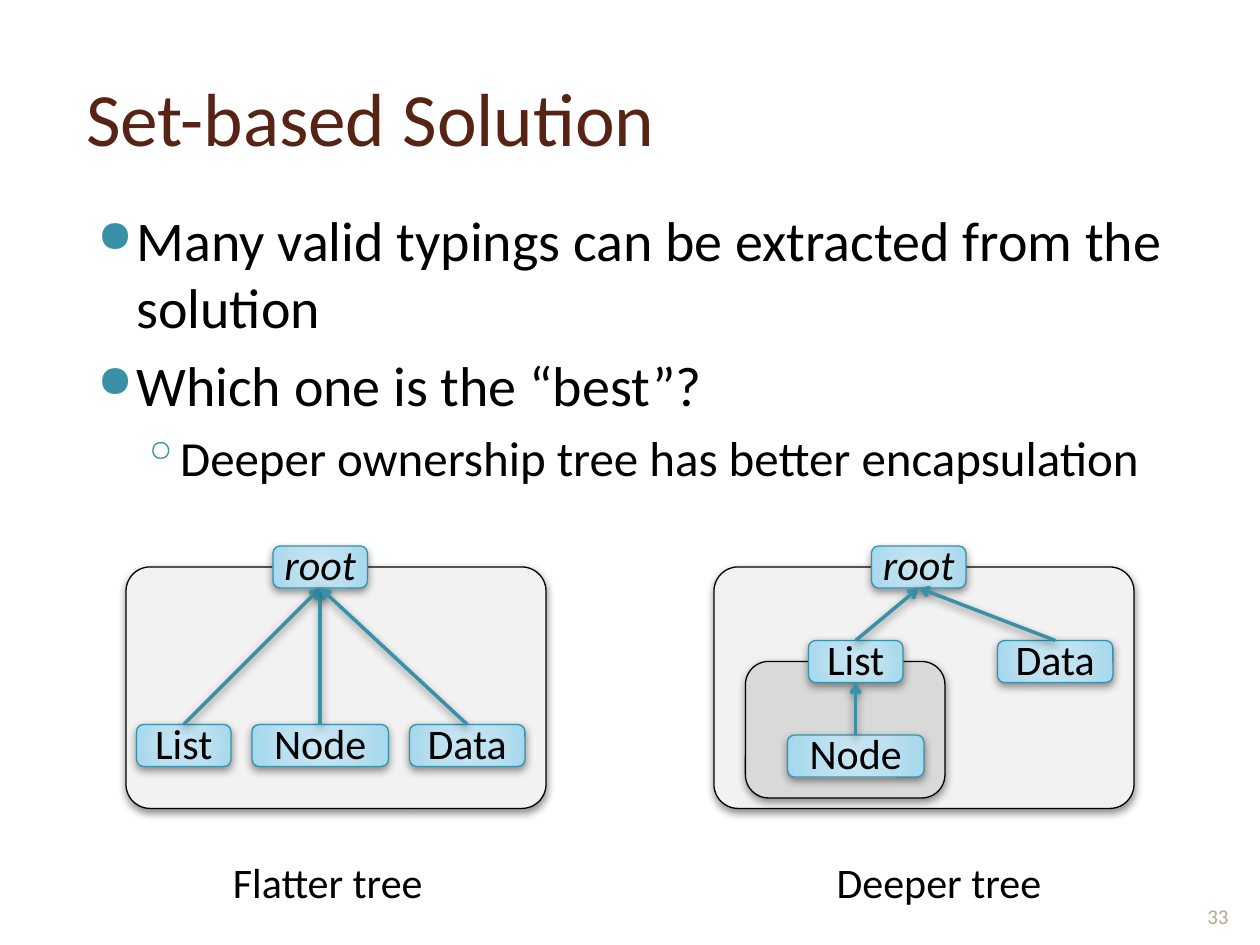
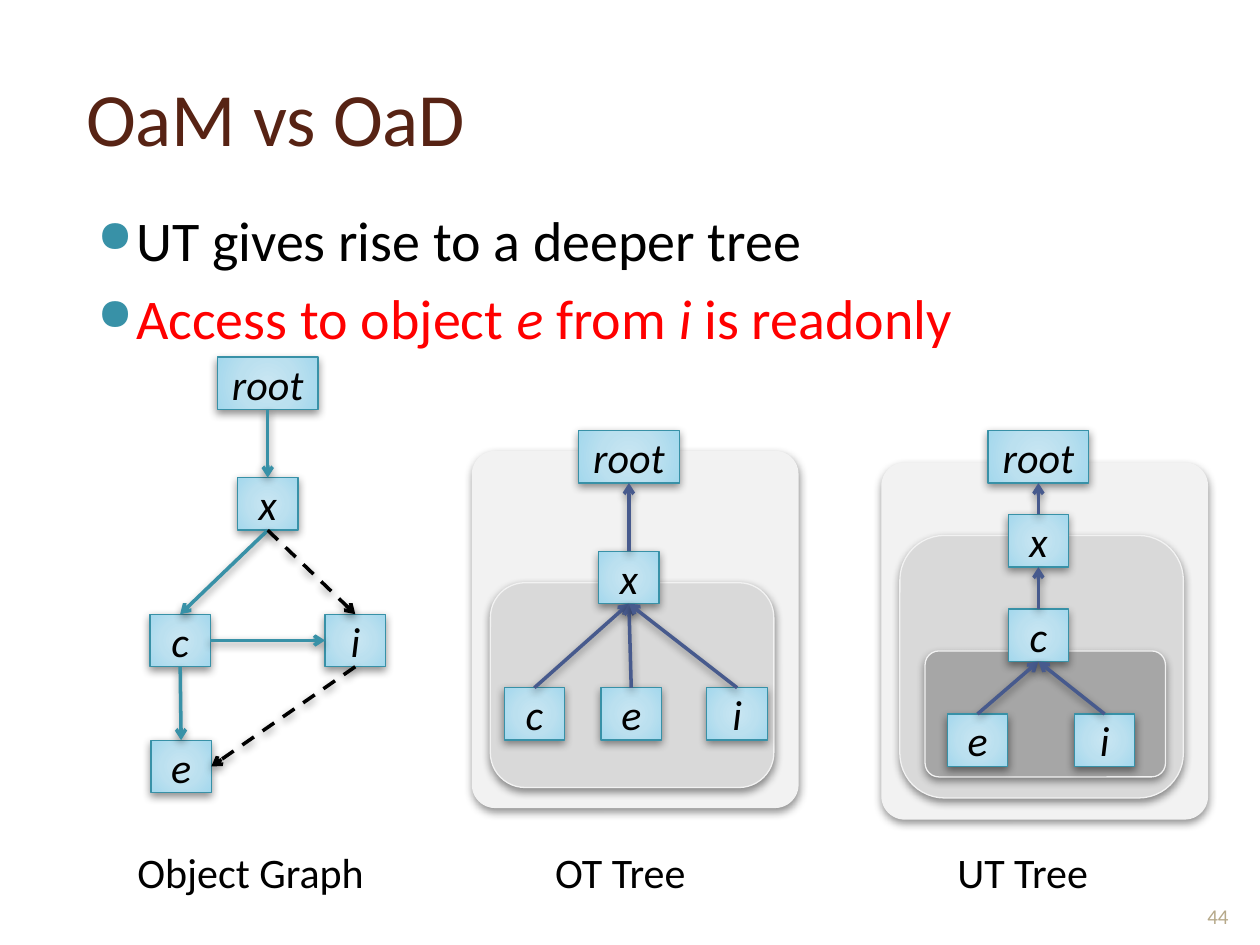
from dataclasses import dataclass

from lxml import etree
from pptx import Presentation
from pptx.dml.color import RGBColor
from pptx.enum.dml import MSO_LINE
from pptx.enum.shapes import MSO_CONNECTOR, MSO_SHAPE
from pptx.enum.text import MSO_ANCHOR, MSO_AUTO_SIZE, PP_ALIGN
from pptx.oxml import parse_xml
from pptx.oxml.ns import nsdecls, qn
from pptx.util import Inches, Pt

RECTANGLE, ROUNDED = MSO_SHAPE.RECTANGLE, MSO_SHAPE.ROUNDED_RECTANGLE
STRAIGHT, DASH = MSO_CONNECTOR.STRAIGHT, MSO_LINE.DASH
LEFT, CENTER = PP_ALIGN.LEFT, PP_ALIGN.CENTER
TOP, MIDDLE, BOTTOM = MSO_ANCHOR.TOP, MSO_ANCHOR.MIDDLE, MSO_ANCHOR.BOTTOM
NO_AUTOFIT = MSO_AUTO_SIZE.NONE
TITLE_ONLY = 5
TOP_SIDE, LEFT_SIDE, BOTTOM_SIDE, RIGHT_SIDE = range(4)
CHILD_TO_PARENT = (TOP_SIDE, BOTTOM_SIDE)
PARENT_TO_CHILD = (BOTTOM_SIDE, TOP_SIDE)


@dataclass(frozen=True)
class Theme:
    font: str = "Calibri"
    title: str = "572314"
    ink: str = "000000"
    accent: str = "3891A7"
    link: str = "475A8D"
    alert: str = "FF0000"
    number: str = "B6A98A"
    light: str = "F2F2F2"
    medium: str = "D9D9D9"
    dark: str = "A6A6A6"
    node_gradient: tuple = ((0, "C9E6F2"), (50, "BBE0EF"), (97, "A4D8ED"), (100, "9BD7EE"))
    title_size: int = 43
    label_size: int = 24
    number_size: int = 12
    thin: float = 0.75
    thick: float = 2


@dataclass(frozen=True)
class BulletStyle:
    size: float
    before: float
    margin: float
    hanging: float
    character: str
    percent: int


@dataclass(frozen=True)
class NodeStyle:
    shape: int
    height: float
    widths: dict
    frame: dict
    spacing: float


BULLETS = (BulletStyle(32, 6, 0.4, 0.31, "●", 80), BulletStyle(28, 5.5, 0.7, 0.26, "◦", 100))
NO_MARGINS = dict.fromkeys(("margin_left", "margin_top", "margin_right", "margin_bottom"), 0)
TYPE_NODE = NodeStyle(ROUNDED, 4, {"root": 9, "List": 9, "Node": 13, "Data": 11},
                      {"vertical_anchor": BOTTOM, **NO_MARGINS}, 0.5)
OBJECT_NODE = NodeStyle(RECTANGLE, 5, {"root": 9.6, "x": 5.76, "c": 5.76, "e": 5.76, "i": 5.76},
                        {"vertical_anchor": MIDDLE}, 1.0)


def apply(target, formats):
    for name, value in formats.items():
        setattr(target, name, value)


class Deck:
    """Places elements on a grid of 120 columns by 90 rows."""

    columns, rows = 120, 90

    def __init__(self, theme):
        self.theme = theme
        self.presentation = Presentation()
        apply(self.presentation, {"slide_width": Inches(10), "slide_height": Inches(7.5)})
        self.slide = None

    def grid(self, column, row, width, height):
        across = self.presentation.slide_width / self.columns
        down = self.presentation.slide_height / self.rows
        return [round(value) for value in (column * across, row * down, width * across, height * down)]

    def add_slide(self, title, number):
        self.slide = self.presentation.slides.add_slide(self.presentation.slide_layouts[TITLE_ONLY])
        holder = self.slide.shapes.title
        apply(holder, dict(zip(("left", "top", "width", "height"), self.grid(7, 3.6, 106.5, 15))))
        apply(holder.text_frame, {"vertical_anchor": MIDDLE, "auto_size": NO_AUTOFIT, "word_wrap": True})
        self.add_text(holder.text_frame.paragraphs[0], title, self.theme.title_size, self.theme.title)
        self.text(str(number), (113, 82.8, 6, 6.2), self.theme.number_size,
                  self.theme.number, CENTER, BOTTOM)

    def add_text(self, paragraph, text, size, color, align=LEFT, italic=False):
        paragraph.alignment = align
        run = paragraph.add_run()
        run.text = text
        apply(run.font, {"name": self.theme.font, "size": Pt(size), "italic": italic})
        run.font.color.rgb = RGBColor.from_string(color)

    def text_frame(self, area, anchor=TOP):
        frame = self.slide.shapes.add_textbox(*self.grid(*area)).text_frame
        apply(frame, {"word_wrap": True, "vertical_anchor": anchor})
        return frame

    def text(self, text, area, size, color, align=LEFT, anchor=TOP):
        self.add_text(self.text_frame(area, anchor).paragraphs[0], text, size, color, align)

    def caption(self, text, column, row, width):
        self.text(text, (column, row, width, 6), self.theme.label_size, self.theme.ink)

    def bullets(self, items):
        """Each item is a level, a colour and runs that alternate upright and italic."""
        frame = self.text_frame((7, 19, 106.5, 63))
        for index, (level, color, runs) in enumerate(items):
            paragraph = frame.add_paragraph() if index else frame.paragraphs[0]
            style = BULLETS[level]
            apply(paragraph, {"level": level, "space_before": Pt(style.before)})
            for position, text in enumerate(runs):
                self.add_text(paragraph, text, style.size, color, italic=position % 2 == 1)
            properties = paragraph._p.get_or_add_pPr()
            properties.set("marL", str(Inches(style.margin)))
            properties.set("indent", str(-Inches(style.hanging)))
            bullet_color = etree.SubElement(properties, qn("a:buClr"))
            etree.SubElement(bullet_color, qn("a:srgbClr"), val=self.theme.accent)
            etree.SubElement(properties, qn("a:buSzPct"), val=str(style.percent * 1000))
            etree.SubElement(properties, qn("a:buChar"), char=style.character)

    def add_shadow(self, properties):
        effects = properties.find(qn("a:effectLst"))
        if effects is None:
            effects = etree.SubElement(properties, qn("a:effectLst"))
        shadow = etree.SubElement(effects, qn("a:outerShdw"), blurRad=str(Pt(5)), dist=str(Pt(2)),
                                  dir="5400000", rotWithShape="0")
        color = etree.SubElement(shadow, qn("a:srgbClr"), val=self.theme.ink)
        etree.SubElement(color, qn("a:alpha"), val="43000")

    def shape(self, kind, area, fill, outline):
        shape = self.slide.shapes.add_shape(kind, *self.grid(*area))
        shape.fill.solid()
        shape.fill.fore_color.rgb = RGBColor.from_string(fill)
        shape.line.color.rgb = RGBColor.from_string(outline)
        shape.line.width = Pt(self.theme.thin)
        shape.shadow.inherit = False
        self.add_shadow(shape.element.spPr)
        return shape

    def panel(self, area, fill, outline, rounding=0.17):
        self.shape(ROUNDED, area, fill, outline).adjustments[0] = rounding

    def node(self, name, center, row, style):
        width = style.widths[name]
        shape = self.shape(style.shape, (center - width / 2, row, width, style.height),
                           self.theme.node_gradient[0][1], self.theme.accent)
        # Radial gradient
        stops = "".join(f'<a:gs pos="{position * 1000}"><a:srgbClr val="{color}"/></a:gs>'
                        for position, color in self.theme.node_gradient)
        properties = shape.element.spPr
        properties.replace(properties.find(qn("a:solidFill")), parse_xml(
            f'<a:gradFill {nsdecls("a")} rotWithShape="1"><a:gsLst>{stops}</a:gsLst><a:path path="circle">'
            '<a:fillToRect l="50000" t="50000" r="50000" b="50000"/></a:path></a:gradFill>'))
        # Label: objects are lower case and italic
        apply(shape.text_frame, {"word_wrap": True, **style.frame})
        paragraph = shape.text_frame.paragraphs[0]
        paragraph.line_spacing = style.spacing
        self.add_text(paragraph, name, self.theme.label_size, self.theme.ink, CENTER, name.islower())
        return shape

    def arrow(self, start, end, sides, color, dash=None):
        connector = self.slide.shapes.add_connector(STRAIGHT, 0, 0, 0, 0)
        connector.begin_connect(start, sides[0])
        connector.end_connect(end, sides[1])
        connector.line.color.rgb = RGBColor.from_string(color)
        apply(connector.line, {"width": Pt(self.theme.thick), "dash_style": dash})
        properties = connector.element.spPr
        etree.SubElement(properties.find(qn("a:ln")), qn("a:tailEnd"), type="arrow")
        self.add_shadow(properties)

    def nodes(self, places, style):
        return {name: self.node(name, center, row, style) for name, (center, row) in places.items()}

    def tree(self, places, parents, style, color):
        nodes = self.nodes(places, style)
        for child, parent in parents.items():
            self.arrow(nodes[child], nodes[parent], CHILD_TO_PARENT, color)


def build_set_solution(deck):
    theme = deck.theme
    deck.add_slide("Set-based Solution", 33)
    deck.bullets([
        (0, theme.ink, ["Many valid typings can be extracted from the solution"]),
        (0, theme.ink, ["Which one is the “best”?"]),
        (1, theme.ink, ["Deeper ownership tree has better encapsulation"]),
    ])

    # Outer panels of both trees
    for column in (12, 68):
        deck.panel((column, 54, 40, 23), theme.light, theme.ink, 0.1)

    # Flatter tree
    deck.tree({"root": (30.5, 52), "List": (17.5, 69), "Node": (30.5, 69), "Data": (44.5, 69)},
              {"List": "root", "Node": "root", "Data": "root"}, TYPE_NODE, theme.accent)
    deck.caption("Flatter tree", 21, 81, 21)

    # Deeper tree
    deck.panel((71, 63, 19, 13), theme.medium, theme.ink)
    deck.tree({"root": (87.5, 52), "List": (81.5, 61), "Node": (81.5, 70), "Data": (100.5, 61)},
              {"List": "root", "Node": "List", "Data": "root"}, TYPE_NODE, theme.accent)
    deck.caption("Deeper tree", 78.5, 81, 22.7)


def build_comparison(deck):
    theme = deck.theme
    deck.add_slide("OaM vs OaD", 44)
    deck.bullets([
        (0, theme.ink, ["UT gives rise to a deeper tree"]),
        (0, theme.alert, ["Access to object ", "e", " from ", "i ", "is readonly"]),
    ])

    # Object graph
    graph = deck.nodes({"root": (25.5, 34), "x": (25.5, 45.5), "i": (33.84, 58.5),
                        "c": (17.16, 58.5), "e": (17.25, 70.5)}, OBJECT_NODE)
    for start, end, sides, color, dash in (
            ("root", "x", PARENT_TO_CHILD, theme.accent, None),
            ("x", "c", PARENT_TO_CHILD, theme.accent, None),
            ("c", "e", PARENT_TO_CHILD, theme.accent, None),
            ("c", "i", (RIGHT_SIDE, LEFT_SIDE), theme.accent, None),
            ("x", "i", PARENT_TO_CHILD, theme.ink, DASH),
            ("i", "e", (BOTTOM_SIDE, RIGHT_SIDE), theme.ink, DASH)):
        deck.arrow(graph[start], graph[end], sides, color, dash)

    # OT tree
    deck.panel((45, 43, 31, 33.9), theme.light, theme.light, 0.07)
    deck.panel((46.7, 55.5, 27, 19.5), theme.medium, theme.light)
    deck.tree({"root": (59.9, 41), "x": (59.9, 52.5), "c": (50.9, 65.5),
               "e": (60.12, 65.5), "i": (70.2, 65.5)},
              {"x": "root", "c": "x", "e": "x", "i": "x"}, OBJECT_NODE, theme.link)

    # UT tree
    deck.panel((84, 44.1, 31, 33.9), theme.light, theme.light, 0.07)
    deck.panel((85.7, 51, 27, 25), theme.medium, theme.light)
    deck.panel((88.1, 62, 22.9, 12), theme.dark, theme.light, 0.11)
    deck.tree({"root": (98.9, 41), "x": (98.9, 49), "c": (98.9, 58),
               "e": (93.1, 68), "i": (105.2, 68)},
              {"x": "root", "c": "x", "e": "c", "i": "c"}, OBJECT_NODE, theme.link)

    for text, column, width in (("Object Graph", 11.9, 25.2), ("OT Tree", 51.7, 17.3), ("UT Tree", 90, 18)):
        deck.caption(text, column, 80, width)


def main():
    deck = Deck(Theme())
    build_set_solution(deck)
    build_comparison(deck)
    deck.presentation.save("out.pptx")


if __name__ == "__main__":
    main()
